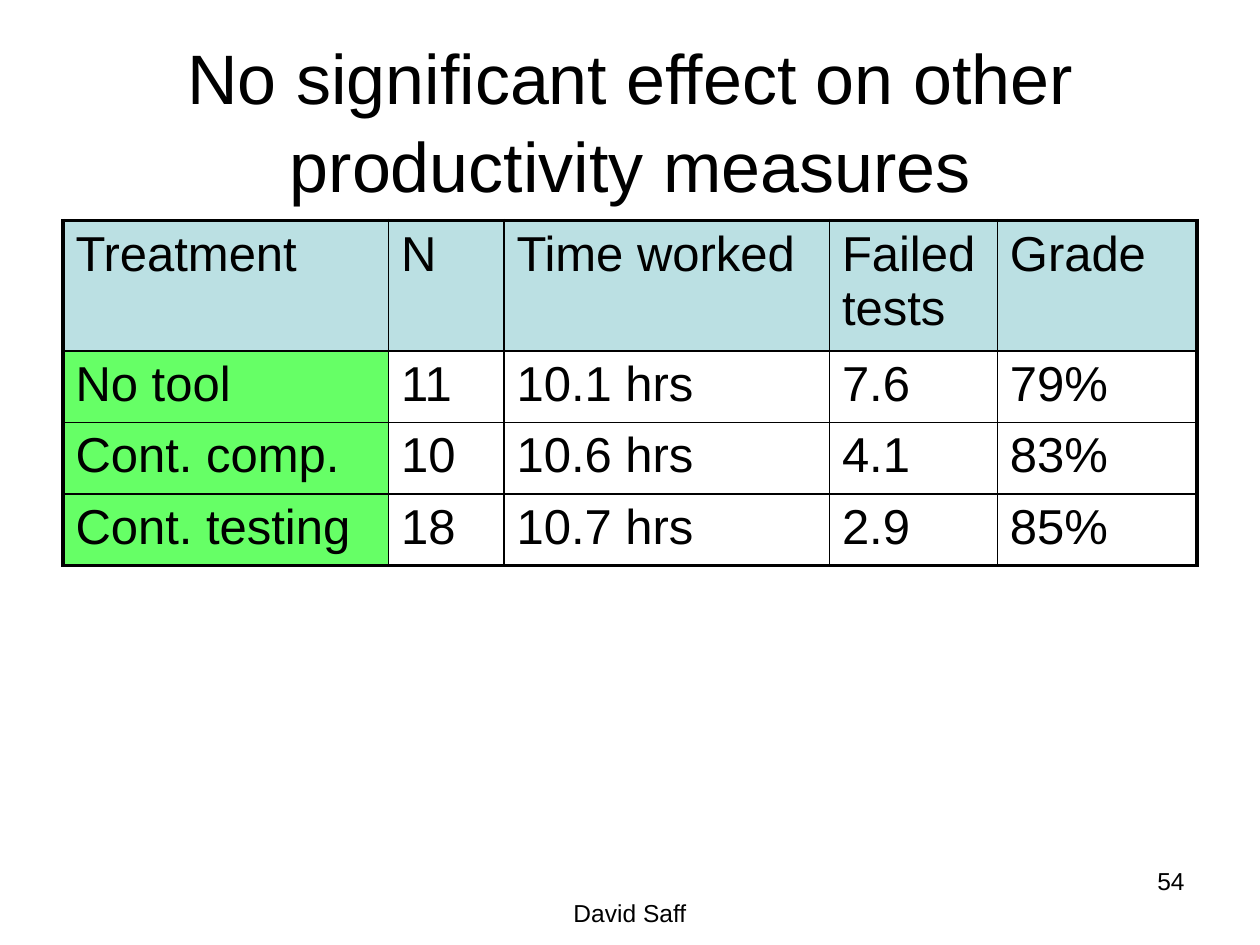
from dataclasses import dataclass

from lxml import etree
from pptx import Presentation
from pptx.dml.color import RGBColor
from pptx.enum.text import MSO_ANCHOR, PP_ALIGN
from pptx.oxml.ns import qn
from pptx.util import Inches, Pt

CENTER, RIGHT, LEFT = PP_ALIGN.CENTER, PP_ALIGN.RIGHT, PP_ALIGN.LEFT
TOP, MIDDLE = MSO_ANCHOR.TOP, MSO_ANCHOR.MIDDLE
WIDTH, HEIGHT = Inches(10), Inches(7.5)


@dataclass(frozen=True)
class Theme:
    """Colours, type sizes and line widths of the slide."""
    font: str = "Arial"
    ink: str = "000000"
    head: str = "BBE0E3"
    label: str = "66FF66"
    title: int = 40
    body: int = 28
    small: int = 14
    thin: float = 1
    thick: float = 2.25


THEME = Theme()
COLS = (31, 11, 31, 16, 19)
ROWS = (0.97, 0.53, 0.53, 0.53)
DATA = (
    ("Treatment", "N", "Time worked", "Failed tests", "Grade"),
    ("No tool", "11", "10.1 hrs", "7.6", "79%"),
    ("Cont. comp.", "10", "10.6 hrs", "4.1", "83%"),
    ("Cont. testing", "18", "10.7 hrs", "2.9", "85%"),
)


def style(para, size, align=LEFT):
    """Set the font and alignment of a paragraph."""
    para.alignment = align
    para.font.name = THEME.font
    para.font.size = Pt(size)
    para.font.color.rgb = RGBColor.from_string(THEME.ink)


def add_text(slide, text, box, size, align, anchor=TOP, space=1.0):
    """Add a text box placed by shares of the slide."""
    left, top, wide, high = box
    shape = slide.shapes.add_textbox(
        int(left * WIDTH), int(top * HEIGHT), int(wide * WIDTH), int(high * HEIGHT))
    frame = shape.text_frame
    frame.word_wrap = True
    frame.vertical_anchor = anchor
    frame.text = text
    para = frame.paragraphs[0]
    para.line_spacing = space
    style(para, size, align)


def add_edge(cell, side, width):
    """Draw one border of a cell."""
    props = cell._tc.get_or_add_tcPr()
    line = etree.SubElement(props, qn(f"a:ln{side}"), w=str(int(Pt(width))))
    fill = etree.SubElement(line, qn("a:solidFill"))
    etree.SubElement(fill, qn("a:srgbClr"), val=THEME.ink)


def fill_cell(cell, text, row, col):
    """Write, border and colour the cell at a row and column."""
    cell.text = text
    style(cell.text_frame.paragraphs[0], THEME.body)
    outer = {"L": col == 0, "R": col == len(COLS) - 1,
             "T": row == 0, "B": row == len(ROWS) - 1}
    for side, edge in outer.items():
        add_edge(cell, side, THEME.thick if edge else THEME.thin)
    tint = THEME.head if row == 0 else THEME.label if col == 0 else None
    if tint:
        cell.fill.solid()
        cell.fill.fore_color.rgb = RGBColor.from_string(tint)
    else:
        cell.fill.background()


def add_grid(slide, left, top):
    """Add the results table with columns in twelfths of an inch."""
    table = slide.shapes.add_table(
        len(ROWS), len(COLS), Inches(left), Inches(top),
        Inches(sum(COLS) / 12), Inches(sum(ROWS))).table
    table.first_row = table.horz_banding = False
    for col, wide in zip(table.columns, COLS):
        col.width = Inches(wide / 12)
    for row, high in zip(table.rows, ROWS):
        row.height = Inches(high)
    for row, line in enumerate(DATA):
        for col, text in enumerate(line):
            fill_cell(table.cell(row, col), text, row, col)


def main():
    """Build and save the slide."""
    deck = Presentation()
    deck.slide_width, deck.slide_height = WIDTH, HEIGHT
    slide = deck.slides.add_slide(deck.slide_layouts[6])
    add_text(slide, "David Saff", (0.34, 0.944, 0.32, 0.036), THEME.small, CENTER)
    add_text(slide, "54", (0.72, 0.91, 0.23, 0.07), THEME.small, RIGHT)
    add_text(slide, "No significant effect on other productivity measures",
             (0.05, 0.04, 0.9, 0.17), THEME.title, CENTER, MIDDLE, 1.05)
    add_grid(slide, 0.5, 1.75)
    deck.save("out.pptx")


if __name__ == "__main__":
    main()
